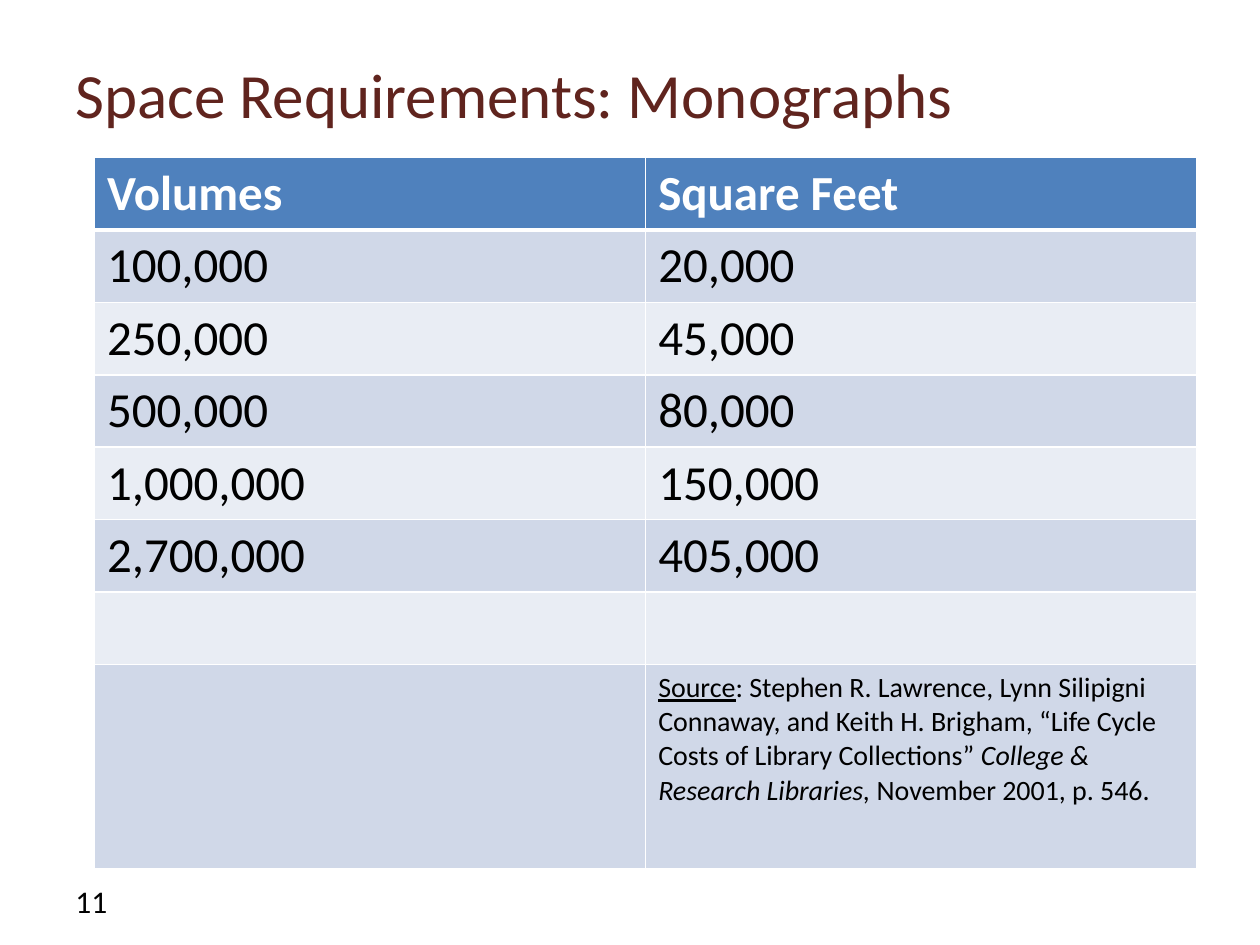
from lxml import etree
from pptx import Presentation
from pptx.dml.color import RGBColor
from pptx.enum import text
from pptx.oxml.ns import qn
from pptx.util import Pt

FONT = "Calibri"
MAROON = RGBColor(0x60, 0x24, 0x1E)
BLACK = RGBColor(0, 0, 0)
WHITE = RGBColor(0xFF, 0xFF, 0xFF)
HEADER_BLUE = RGBColor(0x4F, 0x81, 0xBD)
BAND_FILLS = (RGBColor(0xD0, 0xD8, 0xE8), RGBColor(0xE9, 0xED, 0xF4))

# Content
TITLE = "Space Requirements: Monographs"
PAGE_NUMBER = "11"
SOURCE = [
    ("Source", {"underline": True}),
    (": Stephen R. Lawrence, Lynn Silipigni Connaway, and Keith H. Brigham, "
     "“Life Cycle Costs of Library Collections” ", {}),
    ("College & Research Libraries, ", {"italic": True}),
    ("November 2001, p. 546.", {}),
]
ROWS = [
    ("Volumes", "Square Feet"),
    ("100,000", "20,000"),
    ("250,000", "45,000"),
    ("500,000", "80,000"),
    ("1,000,000", "150,000"),
    ("2,700,000", "405,000"),
    ("", ""),
    ("", SOURCE),
]

# Table layout in points
TABLE_LEFT, TABLE_TOP, TABLE_WIDTH = 54, 90, 630
ROW_HEIGHT, SOURCE_HEIGHT = 41.4, 117


def add_run(paragraph, wording, size, color, **styles):
    run = paragraph.add_run()
    run.text = wording
    run.font.name = FONT
    run.font.size = Pt(size)
    run.font.color.rgb = color
    for style, value in styles.items():
        setattr(run.font, style, value)


def add_text(slide, box, wording, size, color, anchor):
    shape = slide.shapes.add_textbox(*map(Pt, box))
    frame = shape.text_frame
    frame.word_wrap = True
    frame.vertical_anchor = anchor
    add_run(frame.paragraphs[0], wording, size, color)


def set_borders(cell, widths):
    properties = cell._tc.get_or_add_tcPr()
    for index, (side, width) in enumerate(widths.items()):
        line = etree.Element(qn(f"a:ln{side}"), w=str(Pt(width)))
        fill = etree.SubElement(line, qn("a:solidFill"))
        etree.SubElement(fill, qn("a:srgbClr"), val=str(WHITE))
        properties.insert(index, line)


def add_table(slide):
    heights = [ROW_HEIGHT] * (len(ROWS) - 1) + [SOURCE_HEIGHT]
    columns = len(ROWS[0])
    table = slide.shapes.add_table(
        len(ROWS), columns, Pt(TABLE_LEFT), Pt(TABLE_TOP),
        Pt(TABLE_WIDTH), Pt(sum(heights))).table
    for column in table.columns:
        column.width = Pt(TABLE_WIDTH / columns)
    for row_index, (row, height) in enumerate(zip(ROWS, heights)):
        table.rows[row_index].height = Pt(height)
        header = row_index == 0
        for column_index, content in enumerate(row):
            cell = table.cell(row_index, column_index)
            cell.fill.solid()
            cell.fill.fore_color.rgb = (
                HEADER_BLUE if header else BAND_FILLS[(row_index - 1) % 2])
            set_borders(cell, {"L": 1, "R": 1,
                               "T": 3 if row_index == 1 else 1,
                               "B": 3 if header else 1})
            paragraph = cell.text_frame.paragraphs[0]
            if content is SOURCE:
                for wording, styles in SOURCE:
                    add_run(paragraph, wording, 16, BLACK, **styles)
            elif content:
                add_run(paragraph, content, 28, WHITE if header else BLACK,
                        bold=header)


def main():
    presentation = Presentation()
    presentation.slide_width, presentation.slide_height = Pt(720), Pt(540)
    slide = presentation.slides.add_slide(presentation.slide_layouts[6])

    # Title, table and page number
    add_text(slide, (36, 21.6, 648, 63.4), TITLE, 36, MAROON,
             text.MSO_ANCHOR.MIDDLE)
    add_table(slide)
    add_text(slide, (36, 500.4, 168, 28.8), PAGE_NUMBER, 18, BLACK,
             text.MSO_ANCHOR.TOP)

    presentation.save("out.pptx")


if __name__ == "__main__":
    main()
